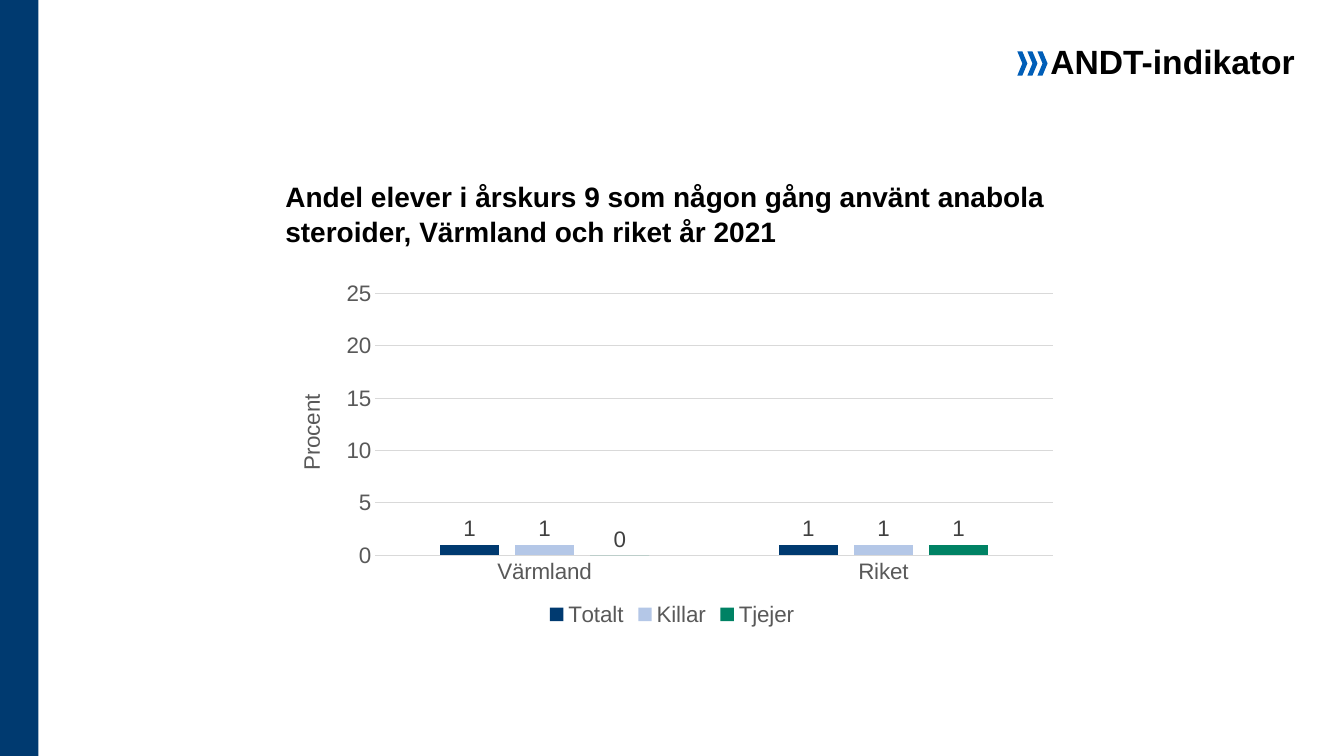
"""Build the slide on anabolic steroid use among pupils in year 9."""
import pptx
import pptx.util
import pptx.chart.data
import pptx.dml.color
import pptx.enum.chart
import pptx.enum.shapes
import pptx.enum.text

Inches = pptx.util.Inches
Pt = pptx.util.Pt
RGBColor = pptx.dml.color.RGBColor
NAVY = RGBColor(0x00, 0x3A, 0x70)
BLUE = RGBColor(0x00, 0x5E, 0xB8)
PALE = RGBColor(0xB4, 0xC7, 0xE7)
GREEN = RGBColor(0x00, 0x82, 0x64)
BLACK = RGBColor(0x00, 0x00, 0x00)
DARK = RGBColor(0x40, 0x40, 0x40)
GRAY = RGBColor(0x59, 0x59, 0x59)
LIGHT = RGBColor(0xD9, 0xD9, 0xD9)


def style(font, size, color, bold=False):
    font.name = "Arial"
    font.size = Pt(size)
    font.bold = bold
    font.color.rgb = color


def draw(kind, left, top, width, height, color):
    shape = slide.shapes.add_shape(
        kind, Inches(left), Inches(top), Inches(width), Inches(height))
    shape.shadow.inherit = False
    shape.fill.solid()
    shape.fill.fore_color.rgb = color
    shape.line.fill.background()


deck = pptx.Presentation()
deck.slide_width = Inches(13.33)
deck.slide_height = Inches(7.5)
slide = deck.slides.add_slide(deck.slide_layouts[5])
kinds = pptx.enum.shapes.MSO_SHAPE

draw(kinds.RECTANGLE, 0, 0, 0.38, 7.5, NAVY)

title = slide.shapes.title
title.left, title.top = Inches(2.73), Inches(1.06)
title.width, title.height = Inches(7.87), Inches(1.45)
frame = title.text_frame
frame.word_wrap = True
frame.auto_size = pptx.enum.text.MSO_AUTO_SIZE.NONE
frame.vertical_anchor = pptx.enum.text.MSO_ANCHOR.BOTTOM
para = frame.paragraphs[0]
para.alignment = pptx.enum.text.PP_ALIGN.LEFT
para.line_spacing = 1.05
run = para.add_run()
run.text = ("Andel elever i årskurs 9 som någon gång använt anabola "
            "steroider, Värmland och riket år 2021")
style(run.font, 20, BLACK, True)

label = slide.shapes.add_textbox(
    Inches(10.31), Inches(0.36), Inches(2.64), Inches(0.38))
label.text_frame.word_wrap = False
para = label.text_frame.paragraphs[0]
para.alignment = pptx.enum.text.PP_ALIGN.CENTER
run = para.add_run()
run.text = "ANDT-indikator"
style(run.font, 24, BLACK, True)

for step in range(3):
    draw(kinds.CHEVRON, 10.29 - 0.1 * step, 0.51, 0.1, 0.24, BLUE)

data = pptx.chart.data.CategoryChartData(number_format="0")
data.categories = ["Värmland", "Riket"]
groups = [("Totalt", (1, 1), NAVY), ("Killar", (1, 1), PALE),
          ("Tjejer", (0, 1), GREEN)]
for name, values, color in groups:
    data.add_series(name, values)
chart = slide.shapes.add_chart(
    pptx.enum.chart.XL_CHART_TYPE.COLUMN_CLUSTERED, Inches(2.73),
    Inches(2.72), Inches(7.87), Inches(3.54), data).chart
style(chart.font, 16, BLACK)
chart.has_title = False
chart.has_legend = True
chart.legend.position = pptx.enum.chart.XL_LEGEND_POSITION.BOTTOM
chart.legend.include_in_layout = False
style(chart.legend.font, 16, GRAY)

plot = chart.plots[0]
plot.gap_width = 219
plot.overlap = -27
plot.vary_by_categories = False
for series, (name, values, color) in zip(plot.series, groups):
    series.format.fill.solid()
    series.format.fill.fore_color.rgb = color
    series.invert_if_negative = False
    marks = series.data_labels
    marks.show_value = True
    marks.position = pptx.enum.chart.XL_LABEL_POSITION.OUTSIDE_END
    marks.number_format = "0"
    marks.number_format_is_linked = False
    style(marks.font, 16, DARK)

across, up = chart.category_axis, chart.value_axis
for axis in (across, up):
    axis.major_tick_mark = pptx.enum.chart.XL_TICK_MARK.NONE
    axis.minor_tick_mark = pptx.enum.chart.XL_TICK_MARK.NONE
    style(axis.tick_labels.font, 16, GRAY)
up.minimum_scale = 0
up.maximum_scale = 25
up.major_unit = 5
up.has_major_gridlines = True
up.tick_labels.number_format = "0"
up.tick_labels.number_format_is_linked = False
up.format.line.fill.background()
for line in (across.format.line, up.major_gridlines.format.line):
    line.color.rgb = LIGHT
    line.width = Pt(0.75)

up.has_title = True
frame = up.axis_title.text_frame
run = frame.paragraphs[0].add_run()
run.text = "Procent"
style(run.font, 16, GRAY)
body = up.axis_title._element.find(".//" + pptx.oxml.ns.qn("a:bodyPr"))
body.set("rot", "-5400000")
body.set("vert", "horz")

deck.save("out.pptx")
